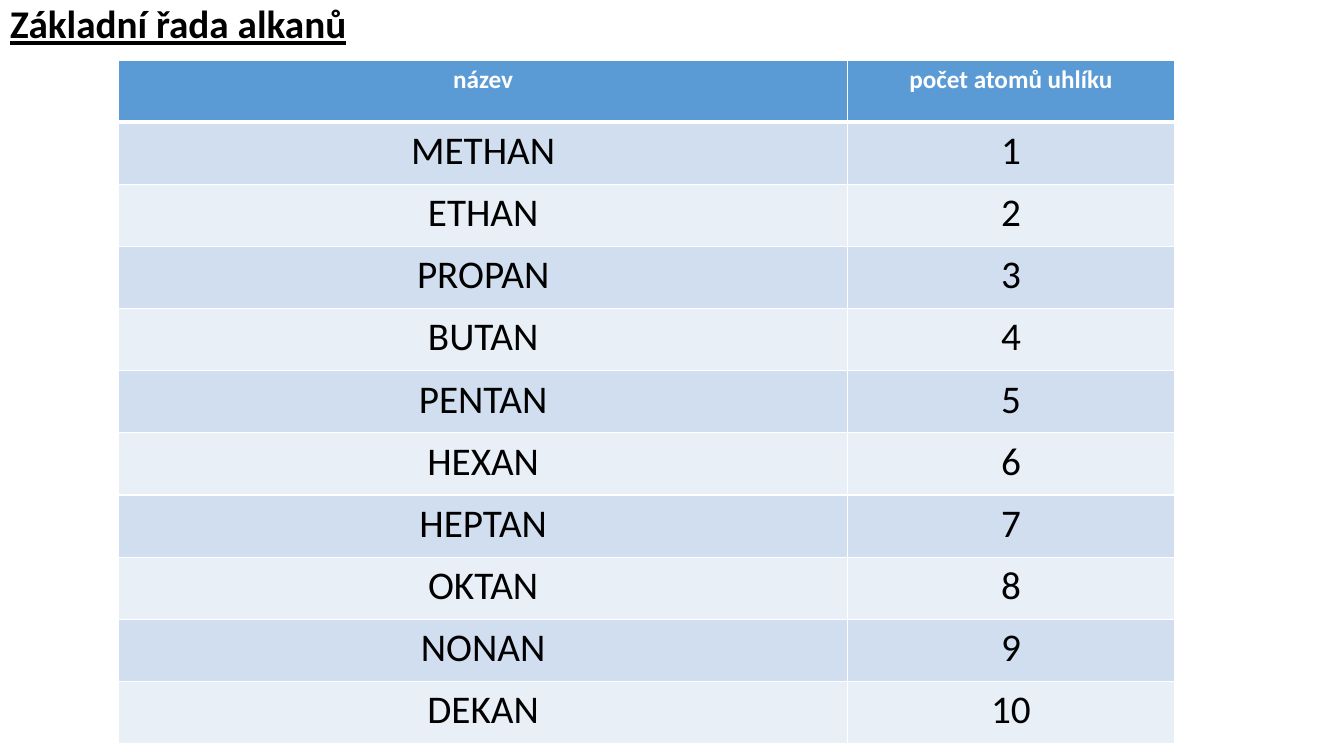
"""Build a slide with a table of the basic alkane series."""
from dataclasses import dataclass

from lxml.etree import SubElement
from pptx import Presentation
from pptx.dml.color import RGBColor
from pptx.enum.text import MSO_ANCHOR, MSO_AUTO_SIZE, PP_ALIGN
from pptx.oxml.ns import qn
from pptx.slide import Slide
from pptx.table import _Cell as Cell
from pptx.text.text import Font
from pptx.util import Pt

FONT_NAME = "Calibri"
BLACK = RGBColor(0x00, 0x00, 0x00)
WHITE = RGBColor(0xFF, 0xFF, 0xFF)
HEADER_BLUE = RGBColor(0x5B, 0x9B, 0xD5)
BAND_DARK = RGBColor(0xD1, 0xDE, 0xEF)
BAND_LIGHT = RGBColor(0xE9, 0xEF, 0xF7)

SLIDE_WIDTH, SLIDE_HEIGHT = Pt(960), Pt(540)
TABLE_LEFT, TABLE_TOP = Pt(84.8), Pt(42.8)
COLUMN_WIDTHS = (Pt(520.6), Pt(233.4))
ROW_HEIGHT = Pt(44.4)
THIN_LINE, HEADER_LINE = Pt(0.96), Pt(3)

HEADERS = ("název", "počet atomů uhlíku")
ALKANES = ("METHAN", "ETHAN", "PROPAN", "BUTAN", "PENTAN",
           "HEXAN", "HEPTAN", "OKTAN", "NONAN", "DEKAN")


@dataclass(frozen=True)
class RowStyle:
    fill: RGBColor
    color: RGBColor
    size: int
    bold: bool = False
    top_line: int = THIN_LINE
    bottom_line: int = THIN_LINE


HEADER_STYLE = RowStyle(HEADER_BLUE, WHITE, 18, bold=True, bottom_line=HEADER_LINE)
FIRST_STYLE = RowStyle(BAND_DARK, BLACK, 28, top_line=HEADER_LINE)
DARK_STYLE = RowStyle(BAND_DARK, BLACK, 28)
LIGHT_STYLE = RowStyle(BAND_LIGHT, BLACK, 28)


def format_font(font: Font, size: int, color: RGBColor, bold: bool) -> None:
    font.name = FONT_NAME
    font.size = Pt(size)
    font.bold = bold
    font.color.rgb = color


def add_borders(cell: Cell, style: RowStyle) -> None:
    properties = cell._tc.get_or_add_tcPr()
    widths = {"a:lnL": THIN_LINE, "a:lnR": THIN_LINE,
              "a:lnT": style.top_line, "a:lnB": style.bottom_line}
    for tag, width in widths.items():
        line = SubElement(properties, qn(tag), w=str(int(width)))
        fill = SubElement(line, qn("a:solidFill"))
        SubElement(fill, qn("a:srgbClr"), val=str(WHITE))


def fill_cell(cell: Cell, text: str, style: RowStyle) -> None:
    add_borders(cell, style)
    cell.fill.solid()
    cell.fill.fore_color.rgb = style.fill
    cell.text_frame.text = text
    paragraph = cell.text_frame.paragraphs[0]
    paragraph.alignment = PP_ALIGN.CENTER
    format_font(paragraph.runs[0].font, style.size, style.color, style.bold)


def add_title(slide: Slide, text: str) -> None:
    title = slide.shapes.title
    title.left, title.top = Pt(0), Pt(0)
    title.width, title.height = SLIDE_WIDTH, SLIDE_HEIGHT
    frame = title.text_frame
    frame.text = text
    frame.word_wrap = True
    frame.auto_size = MSO_AUTO_SIZE.NONE
    frame.vertical_anchor = MSO_ANCHOR.TOP
    paragraph = frame.paragraphs[0]
    paragraph.alignment = PP_ALIGN.LEFT
    paragraph.line_spacing = 0.9
    font = paragraph.runs[0].font
    format_font(font, 28, BLACK, bold=True)
    font.underline = True


def add_alkane_table(slide: Slide) -> None:
    row_count = len(ALKANES) + 1
    table = slide.shapes.add_table(
        row_count, len(HEADERS), TABLE_LEFT, TABLE_TOP,
        sum(COLUMN_WIDTHS), ROW_HEIGHT * row_count).table
    for column, width in zip(table.columns, COLUMN_WIDTHS):
        column.width = width
    rows = [HEADERS] + [(name, str(carbons)) for carbons, name in enumerate(ALKANES, 1)]
    bands = [DARK_STYLE if index % 2 else LIGHT_STYLE for index in range(2, row_count)]
    styles = [HEADER_STYLE, FIRST_STYLE] + bands
    for row, texts, style in zip(table.rows, rows, styles):
        row.height = ROW_HEIGHT
        for cell, text in zip(row.cells, texts):
            fill_cell(cell, text, style)


def main() -> None:
    presentation = Presentation()
    presentation.slide_width, presentation.slide_height = SLIDE_WIDTH, SLIDE_HEIGHT
    slide = presentation.slides.add_slide(presentation.slide_layouts[5])
    add_title(slide, "Základní řada alkanů")
    add_alkane_table(slide)
    presentation.save("out.pptx")


if __name__ == "__main__":
    main()
